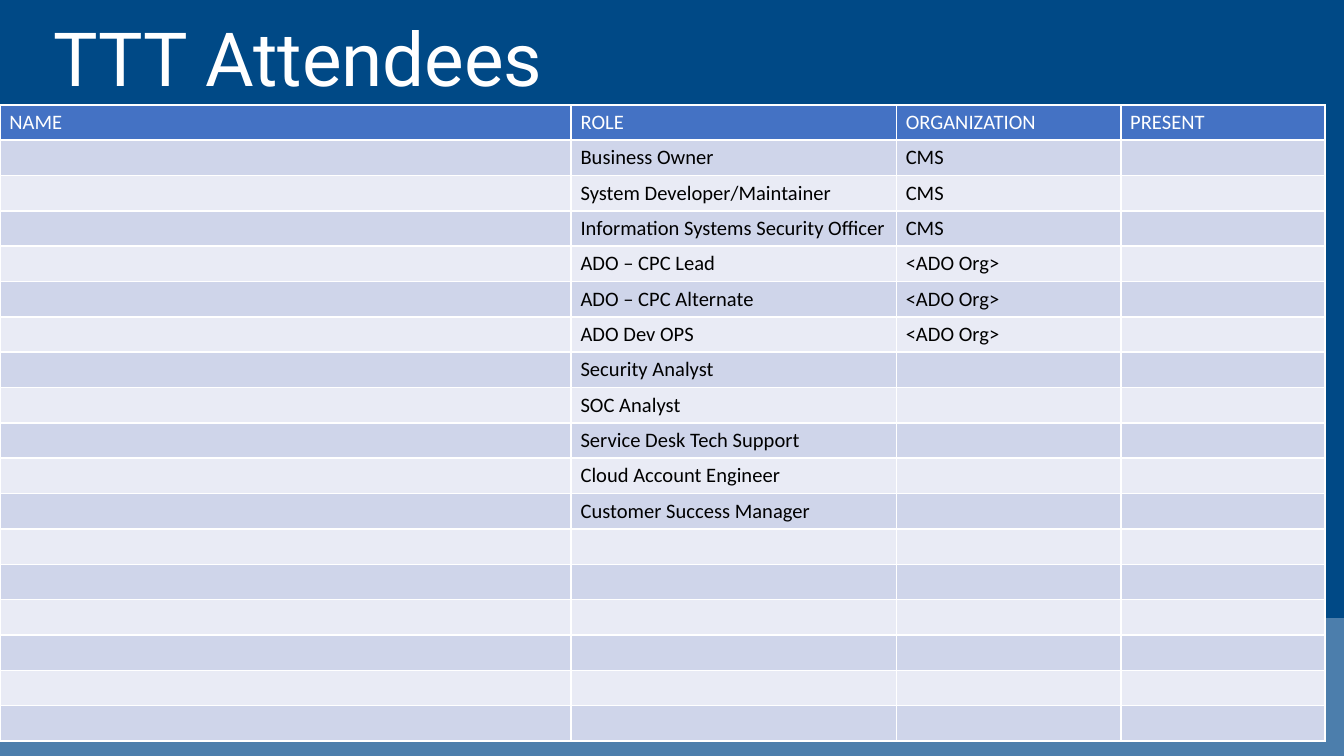
"""Build the TTT attendee list slide."""
from lxml import etree
from pptx import Presentation
from pptx.dml.color import RGBColor
from pptx.enum.shapes import MSO_SHAPE
from pptx.enum.text import MSO_ANCHOR, PP_ALIGN
from pptx.oxml.ns import qn
from pptx.util import Inches, Pt

RECTANGLE = MSO_SHAPE.RECTANGLE
MIDDLE = MSO_ANCHOR.MIDDLE
LEFT = PP_ALIGN.LEFT

SLIDE_WIDTH = 10
SLIDE_HEIGHT = SLIDE_WIDTH * 9 / 16
ROW_COUNT = 18
COLUMN_WIDTHS = [4.25, 2.42, 1.67, 1.52]
HEADINGS = ["NAME", "ROLE", "ORGANIZATION", "PRESENT"]
ATTENDEES = [
    ("Business Owner", "CMS"),
    ("System Developer/Maintainer", "CMS"),
    ("Information Systems Security Officer", "CMS"),
    ("ADO – CPC Lead", "<ADO Org>"),
    ("ADO – CPC Alternate", "<ADO Org>"),
    ("ADO Dev OPS", "<ADO Org>"),
    ("Security Analyst", ""),
    ("SOC Analyst", ""),
    ("Service Desk Tech Support", ""),
    ("Cloud Account Engineer", ""),
    ("Customer Success Manager", ""),
]


def color(value):
    return RGBColor.from_string(value)


class AttendeeSlide:
    title_font = "Roboto"
    table_font = "Calibri"
    table_size = Pt(11)
    white = "FFFFFF"
    black = "000000"
    header_fill = "4472C4"
    row_fills = ["E9EBF5", "CFD5EA"]

    def __init__(self, deck):
        self.page = deck.slides.add_slide(deck.slide_layouts[5])

    def band(self, top, fill, opacity=100):
        shape = self.page.shapes.add_shape(
            RECTANGLE, Inches(-0.17), Inches(top),
            Inches(SLIDE_WIDTH + 0.17), Inches(SLIDE_HEIGHT - top))
        shape.shadow.inherit = False
        shape.line.fill.background()
        shape.fill.solid()
        shape.fill.fore_color.rgb = color(fill)
        if opacity < 100:
            fill_color = shape.element.spPr.find(qn("a:solidFill"))[0]
            etree.SubElement(fill_color, qn("a:alpha"), val=str(opacity * 1000))
        self.page.shapes.title.element.addprevious(shape.element)

    def title(self, text):
        box = self.page.shapes.title
        box.left, box.top = Inches(0.3), Inches(0)
        box.width, box.height = Inches(7.36), Inches(0.93)
        frame = box.text_frame
        frame.text = text
        frame.word_wrap = True
        frame.vertical_anchor = MIDDLE
        para = frame.paragraphs[0]
        para.alignment = LEFT
        para.line_spacing = 0.9
        font = para.runs[0].font
        font.name, font.size = self.title_font, Pt(40)
        font.color.rgb = color(self.white)

    def borders(self, cell):
        properties = cell._tc.get_or_add_tcPr()
        for side in "LRTB":
            line = etree.SubElement(properties, qn(f"a:ln{side}"), w=str(Pt(1)))
            fill = etree.SubElement(line, qn("a:solidFill"))
            etree.SubElement(fill, qn("a:srgbClr"), val=self.white)

    def cell(self, cell, text, text_color, fill):
        self.borders(cell)
        cell.fill.solid()
        cell.fill.fore_color.rgb = color(fill)
        cell.margin_left = cell.margin_right = Inches(0.07)
        cell.margin_top = cell.margin_bottom = Pt(2.6)
        para = cell.text_frame.paragraphs[0]
        if not text:
            etree.SubElement(para._p, qn("a:endParaRPr"),
                             sz=str(self.table_size.centipoints))
            return
        para.text = text
        font = para.runs[0].font
        font.name, font.size, font.bold = self.table_font, self.table_size, False
        font.color.rgb = color(text_color)

    def table(self, rows, left, top, height):
        table = self.page.shapes.add_table(
            len(rows), len(COLUMN_WIDTHS), Inches(left), Inches(top),
            Inches(sum(COLUMN_WIDTHS)), Inches(height)).table
        for column, width in zip(table.columns, COLUMN_WIDTHS):
            column.width = Inches(width)
        for index, values in enumerate(rows):
            fill = self.row_fills[index % 2] if index else self.header_fill
            text_color = self.black if index else self.white
            for cell, text in zip(table.rows[index].cells, values):
                self.cell(cell, text, text_color, fill)


def main():
    deck = Presentation()
    deck.slide_width = Inches(SLIDE_WIDTH)
    deck.slide_height = Inches(SLIDE_HEIGHT)
    slide = AttendeeSlide(deck)
    slide.band(0, "004986")
    slide.band(4.6, "DAE3F3", opacity=35)
    slide.title("TTT Attendees")
    rows = [HEADINGS] + [["", role, group, ""] for role, group in ATTENDEES]
    rows += [[""] * len(HEADINGS)] * (ROW_COUNT - len(rows))
    slide.table(rows, 0, 0.78, 4.74)
    deck.save("out.pptx")


if __name__ == "__main__":
    main()
